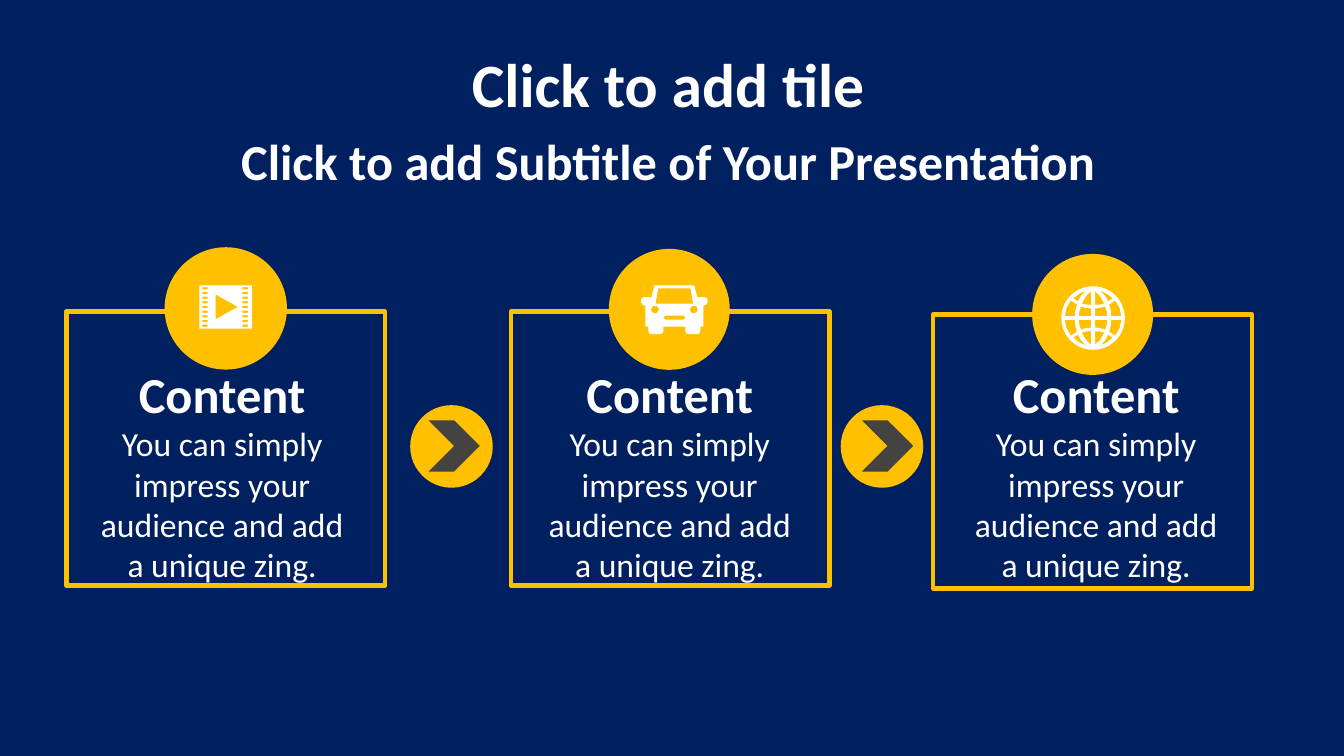
from math import cos, pi, sin

from pptx import Presentation
from pptx.dml.color import RGBColor
from pptx.enum.shapes import MSO_SHAPE
from pptx.enum.text import MSO_ANCHOR, MSO_AUTO_SIZE, PP_ALIGN
from pptx.util import Pt

COLORS = {"navy": "002060", "gold": "FFC000", "white": "FFFFFF", "gray": "444342"}
CARD_TEXT = "You can simply impress your audience and add a unique zing."
# card left, card top, badge left, badge top, text left
CARDS = [
    (47.5, 222.5, 118.1, 177.1, 59),
    (365, 222.5, 434.9, 177.8, 378.7),
    (666.7, 224.6, 737.3, 181.4, 683.3),
]
# circle left, chevron left
ARROWS = [(293, 306), (600.5, 615.6)]

# Openings in the lower right quarter of the globe, from its centre
GLOBE_CELLS = [
    [(1.4, 1.3), (10.1, 1.3), (9.8, 5), (8.6, 8.3), (5, 7.2), (1.4, 6.8)],
    [(13, 1.3), (20.2, 1.3), (19, 7.2), (15.8, 12.6), (11.5, 9.7), (12.6, 5.5)],
    [(1.4, 9.4), (4.9, 9.6), (8, 10.4), (5.2, 15.5), (1.4, 19.2)],
    [(10.8, 11.9), (14, 14), (10, 17.4), (5, 19.6), (8.4, 16.2)],
]
# Right half of the car body, from the middle of its roof
CAR_HALF = [
    (14.2, 0), (16.5, 8.8), (18, 8.4), (21.5, 8.4), (23.2, 9), (23.8, 10.5),
    (23.8, 11.8), (23, 13.7), (21.2, 14.4), (20.7, 15), (20.7, 29.5),
    (18.6, 29.5), (18.6, 32.6), (18, 34.2), (16.4, 34.9), (9.9, 34.9),
    (8.4, 34.2), (7.8, 32.6), (7.8, 29.5),
]
GRILLE_HALF = [(6.5, 21.6), (7.5, 22.5), (7.5, 23.6), (6.5, 24.5)]


def color(name):
    return RGBColor.from_string(COLORS[name])


def add_shape(shapes, kind, left, top, width, height, fill=None, line=None, weight=1):
    shape = shapes.add_shape(kind, Pt(left), Pt(top), Pt(width), Pt(height))
    paint(shape, fill, line, weight)


def paint(shape, fill=None, line=None, weight=1):
    shape.shadow.inherit = False
    if fill:
        shape.fill.solid()
        shape.fill.fore_color.rgb = color(fill)
    else:
        shape.fill.background()
    if line:
        shape.line.color.rgb = color(line)
        shape.line.width = Pt(weight)
    else:
        shape.line.fill.background()


def write(para, text, size, bold=False, spacing=None):
    para.alignment = PP_ALIGN.CENTER
    para.space_before = Pt(0)
    if spacing:
        para.line_spacing = spacing
    span = para.add_run()
    span.text = text
    span.font.name = "Calibri"
    span.font.size = Pt(size)
    span.font.bold = bold
    span.font.color.rgb = color("white")


def add_text_box(slide, left, top, width, height):
    box = slide.shapes.add_textbox(Pt(left), Pt(top), Pt(width), Pt(height))
    box.text_frame.word_wrap = True
    return box.text_frame


def add_headings(slide):
    title = slide.shapes.title
    title.left, title.top, title.width, title.height = Pt(63.4), Pt(35.3), Pt(828), Pt(62.6)
    title.text_frame.vertical_anchor = MSO_ANCHOR.TOP
    write(title.text_frame.paragraphs[0], "Click to add tile", 44, bold=True, spacing=0.9)
    frame = add_text_box(slide, 63.4, 94.3, 828, 62.6)
    write(frame.paragraphs[0], "Click to add Subtitle of Your Presentation", 36,
          bold=True, spacing=0.9)


def add_icon(slide, left, top, contours):
    """Draw closed contours as one white outline; inner contours become holes."""
    placed = [[(Pt(left + x), Pt(top + y)) for x, y in contour] for contour in contours]
    builder = slide.shapes.build_freeform(*placed[0][0])
    builder.add_line_segments(placed[0][1:], close=True)
    for contour in placed[1:]:
        builder.move_to(*contour[0])
        builder.add_line_segments(contour[1:], close=True)
    paint(builder.convert_to_shape(), fill="white")


def circle(x, y, radius, steps):
    angles = [2 * pi * step / steps for step in range(steps)]
    return [(x + radius * cos(angle), y + radius * sin(angle)) for angle in angles]


def rectangle(left, top, width, height):
    right, bottom = left + width, top + height
    return [(left, top), (right, top), (right, bottom), (left, bottom)]


def mirrored(half):
    return half + [(-x, y) for x, y in reversed(half)]


def film_contours():
    holes = [rectangle(x, 1.4 + 3.33 * row, 3.8, 1.6) for x in (2, 30.7) for row in range(9)]
    play = [(11.5, 6.5), (11.5, 24.3), (27.4, 15.4)]
    return [rectangle(0, 0, 37.5, 30.9), play] + holes


def car_contours():
    windshield = mirrored([(11.5, 2.2), (13.5, 13)])
    headlights = [circle(x, 17.3, 2.7, 20) for x in (-13.9, 13.9)]
    return [mirrored(CAR_HALF), windshield, mirrored(GRILLE_HALF)] + headlights


def globe_contours():
    cells = [[(x * across, y * down) for x, y in cell]
             for across in (-1, 1) for down in (-1, 1) for cell in GLOBE_CELLS]
    return [circle(0, 0, 22.7, 60)] + cells


def add_card(slide, left, top, badge_left, badge_top, badge_line):
    shapes = slide.shapes.add_group_shape().shapes
    add_shape(shapes, MSO_SHAPE.RECTANGLE, left, top, 227.5, 195.8, line="gold", weight=3)
    add_shape(shapes, MSO_SHAPE.OVAL, badge_left, badge_top, 86.4, 86.4,
              fill="gold", line=badge_line)


def add_arrow(slide, circle_left, chevron_left):
    shapes = slide.shapes.add_group_shape().shapes
    add_shape(shapes, MSO_SHAPE.OVAL, circle_left, 289.4, 59, 59, fill="gold")
    add_shape(shapes, MSO_SHAPE.CHEVRON, chevron_left, 300.2, 36.7, 36.7, fill="gray")


def add_card_text(slide, left):
    frame = add_text_box(slide, left, 269.3, 199.4, 138.2)
    frame.vertical_anchor = MSO_ANCHOR.MIDDLE
    frame.auto_size = MSO_AUTO_SIZE.SHAPE_TO_FIT_TEXT
    write(frame.paragraphs[0], "Content", 36, bold=True)
    write(frame.add_paragraph(), CARD_TEXT, 24)


def main():
    deck = Presentation()
    deck.slide_width, deck.slide_height = Pt(960), Pt(540)
    slide = deck.slides.add_slide(deck.slide_layouts[5])
    slide.background.fill.solid()
    slide.background.fill.fore_color.rgb = color("navy")

    add_headings(slide)
    for number, (left, top, badge_left, badge_top, _) in enumerate(CARDS):
        add_card(slide, left, top, badge_left, badge_top, None if number else "gold")
    add_icon(slide, 780.8, 227.2, globe_contours())
    add_icon(slide, 142.5, 203.8, film_contours())
    add_icon(slide, 481.7, 203.8, car_contours())
    for circle_left, chevron_left in ARROWS:
        add_arrow(slide, circle_left, chevron_left)
    for card in CARDS:
        add_card_text(slide, card[-1])
    deck.save("out.pptx")


if __name__ == "__main__":
    main()
